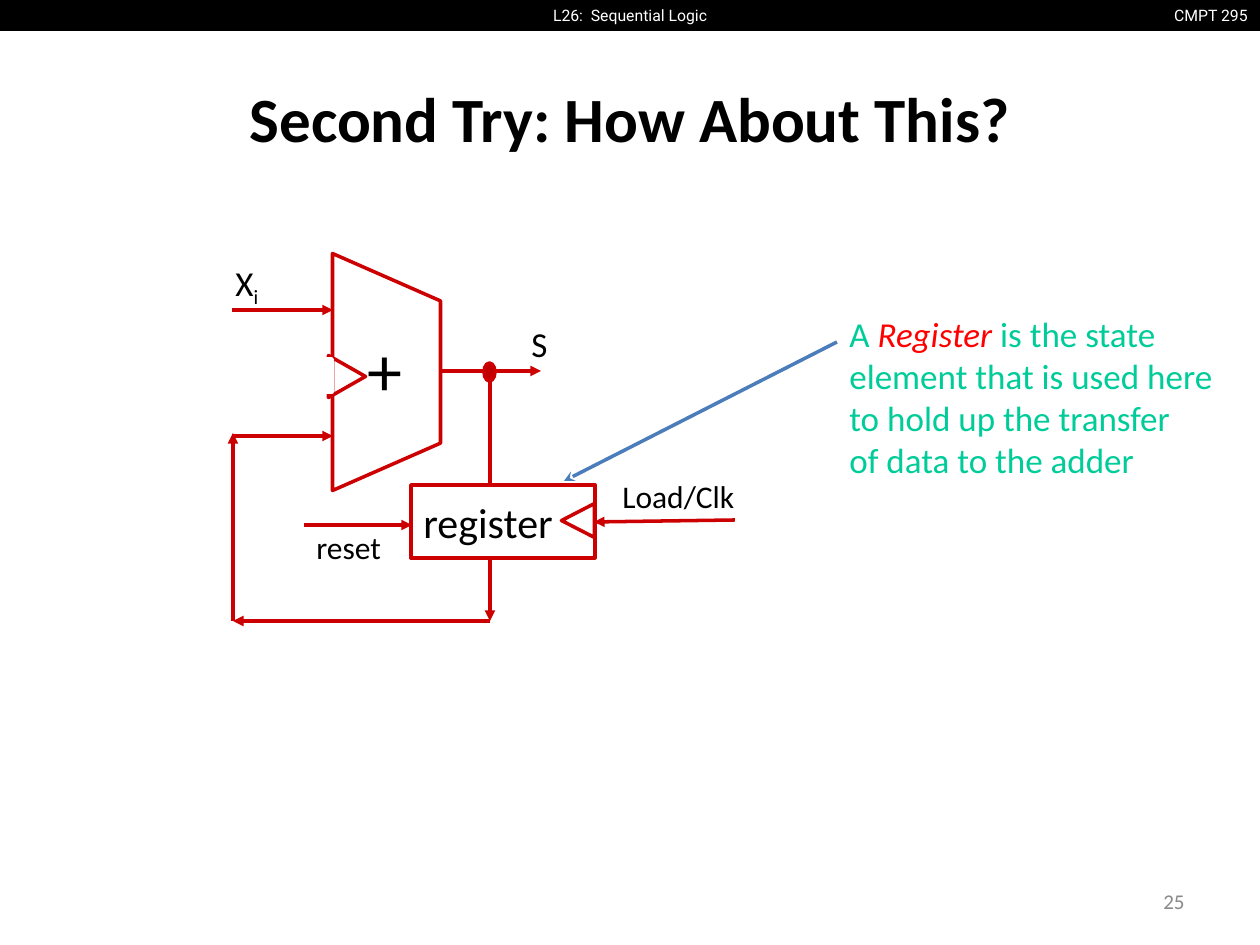
from dataclasses import dataclass
from typing import NamedTuple

from pptx import Presentation
from pptx.dml.color import RGBColor
from pptx.enum.shapes import MSO_CONNECTOR, MSO_SHAPE as Preset
from pptx.enum.text import MSO_ANCHOR as Anchor, PP_ALIGN as Align
from pptx.oxml.ns import qn
from pptx.util import Emu, Pt
from lxml.etree import SubElement

EMU_PER_INCH = 914400
PX_PER_INCH = 126

BLACK = RGBColor(0x00, 0x00, 0x00)
WHITE = RGBColor(0xFF, 0xFF, 0xFF)
GRAY = RGBColor(0x88, 0x88, 0x88)
CIRCUIT_RED = RGBColor(0xCC, 0x00, 0x00)
DOT_RED = RGBColor(0xC0, 0x00, 0x00)
KEYWORD_RED = RGBColor(0xFF, 0x00, 0x00)
NOTE_GREEN = RGBColor(0x00, 0xCC, 0x99)
POINTER_BLUE = RGBColor(0x4A, 0x7D, 0xBA)


class Box(NamedTuple):
    left: int
    top: int
    width: int
    height: int


@dataclass(frozen=True)
class Label:
    text: str
    box: Box
    size: int
    color: RGBColor = BLACK
    font: str = "Calibri"
    align: Align = Align.LEFT
    anchor: Anchor = Anchor.TOP
    wrap: bool = False


@dataclass(frozen=True)
class Part:
    preset: Preset
    box: Box
    fill: RGBColor | None = None
    line: RGBColor | None = CIRCUIT_RED
    rotation: int = 0


@dataclass(frozen=True)
class Wire:
    start: tuple[int, int]
    end: tuple[int, int]
    color: RGBColor = CIRCUIT_RED
    head: str = "triangle"


HEADER_BAND = Part(Preset.RECTANGLE, Box(0, 0, 1260, 31), fill=BLACK, line=None)
ADDER = Part(Preset.FLOWCHART_MANUAL_OPERATION, Box(268, 318, 237, 108), rotation=270)
REGISTER = Part(Preset.RECTANGLE, Box(411, 485, 184, 73), fill=WHITE)
NOTCH_AND_DOT = (
    Part(Preset.OVAL, Box(484, 363, 11, 18), fill=DOT_RED),
    Part(Preset.ISOSCELES_TRIANGLE, Box(326, 358, 42, 37), rotation=90),
    Part(Preset.RECTANGLE, Box(316, 359, 16, 33), fill=WHITE, line=WHITE),
)
CLOCK_MARK = Part(Preset.ISOSCELES_TRIANGLE, Box(561, 504, 34, 33), rotation=270)

DATA_WIRES = (
    Wire((232, 310), (333, 310)),
    Wire((232, 436), (333, 436)),
    Wire((440, 371), (541, 371)),
    Wire((490, 371), (490, 621)),
    Wire((490, 621), (233, 621)),
    Wire((233, 621), (233, 433)),
)
CONTROL_WIRES = (
    Wire((735, 520), (594, 522)),
    Wire((304, 525), (412, 525)),
)
POINTER = Wire((837, 342), (564, 481), POINTER_BLUE, "stealth")

LABELS = (
    Label("CMPT 295", Box(1158, 0, 102, 31), 9, WHITE, "Roboto", Align.RIGHT),
    Label("L26:  Sequential Logic", Box(513, 0, 234, 31), 9, WHITE, "Roboto", Align.CENTER),
    Label("+", Box(355, 320, 60, 97), 40),
    Label("S", Box(519, 316, 42, 55), 20),
    Label("Load/Clk", Box(610, 471, 139, 50), 18),
    Label("reset", Box(304, 522, 91, 50), 18, wrap=True),
    Label("25", Box(903, 876, 294, 50), 12, GRAY, align=Align.RIGHT,
          anchor=Anchor.MIDDLE, wrap=True),
)
INPUT_LABEL = Label("X", Box(223, 255, 49, 55), 20)
NOTE = Label("A ", Box(837, 306, 391, 221), 20, NOTE_GREEN, wrap=True)


def px(length: int) -> Emu:
    return Emu(round(length * EMU_PER_INCH / PX_PER_INCH))


def place(box: Box) -> tuple[Emu, ...]:
    return tuple(px(length) for length in box)


def style_paragraph(paragraph, size: int, color: RGBColor = BLACK,
                    font: str = "Calibri", align: Align = Align.LEFT) -> None:
    paragraph.alignment = align
    paragraph.font.size = Pt(size)
    paragraph.font.name = font
    paragraph.font.color.rgb = color


def draw_label(slide, label: Label):
    """Draw the label and return its paragraph, so that runs can be added."""
    frame = slide.shapes.add_textbox(*place(label.box)).text_frame
    frame.word_wrap = label.wrap
    frame.vertical_anchor = label.anchor
    paragraph = frame.paragraphs[0]
    paragraph.add_run().text = label.text
    style_paragraph(paragraph, label.size, label.color, label.font, label.align)
    return paragraph


def draw_part(slide, part: Part):
    shape = slide.shapes.add_shape(part.preset, *place(part.box))
    shape.shadow.inherit = False
    shape.rotation = part.rotation
    if part.fill is None:
        shape.fill.background()
    else:
        shape.fill.solid()
        shape.fill.fore_color.rgb = part.fill
    if part.line is None:
        shape.line.fill.background()
    else:
        shape.line.color.rgb = part.line
        shape.line.width = Pt(2)
    return shape


def draw_wire(slide, wire: Wire) -> None:
    ends = (px(length) for length in wire.start + wire.end)
    connector = slide.shapes.add_connector(MSO_CONNECTOR.STRAIGHT, *ends)
    connector.line.color.rgb = wire.color
    connector.line.width = Pt(2)
    properties = connector._element.spPr
    SubElement(properties.find(qn("a:ln")), qn("a:tailEnd"), type=wire.head)
    SubElement(properties, qn("a:effectLst"))


def draw_title(slide) -> None:
    title = slide.shapes.title
    title.left, title.top, title.width, title.height = place(Box(63, 38, 1134, 158))
    title.text_frame.text = "Second Try: How About This?"
    title.text_frame.vertical_anchor = Anchor.MIDDLE
    heading = title.text_frame.paragraphs[0]
    style_paragraph(heading, 36, align=Align.CENTER)
    heading.font.bold = True


def draw_register(slide) -> None:
    frame = draw_part(slide, REGISTER).text_frame
    frame.text = "register"
    frame.vertical_anchor = Anchor.MIDDLE
    style_paragraph(frame.paragraphs[0], 24)


def draw_note(slide) -> None:
    paragraph = draw_label(slide, NOTE)
    keyword = paragraph.add_run()
    keyword.text = "Register "
    keyword.font.color.rgb = KEYWORD_RED
    keyword.font.italic = True
    paragraph.add_run().text = "is the state element that is used here to hold up the transfer "
    paragraph.add_line_break()
    paragraph.add_run().text = "of data to the adder"
    for run in paragraph.runs:
        run.font.size = Pt(NOTE.size)


def draw_circuit(slide) -> None:
    draw_part(slide, ADDER)
    for wire in DATA_WIRES:
        draw_wire(slide, wire)
    for part in NOTCH_AND_DOT:
        draw_part(slide, part)
    draw_register(slide)
    draw_part(slide, CLOCK_MARK)
    for wire in CONTROL_WIRES:
        draw_wire(slide, wire)
    subscript = draw_label(slide, INPUT_LABEL).add_run()
    subscript.text = "i"
    subscript.font._element.set("baseline", "-25000")


def main() -> None:
    deck = Presentation()
    deck.slide_width, deck.slide_height = px(1260), px(945)
    slide = deck.slides.add_slide(deck.slide_layouts[5])
    draw_part(slide, HEADER_BAND)
    draw_title(slide)
    draw_note(slide)
    draw_wire(slide, POINTER)
    draw_circuit(slide)
    for label in LABELS:
        draw_label(slide, label)
    deck.save("out.pptx")


if __name__ == "__main__":
    main()
